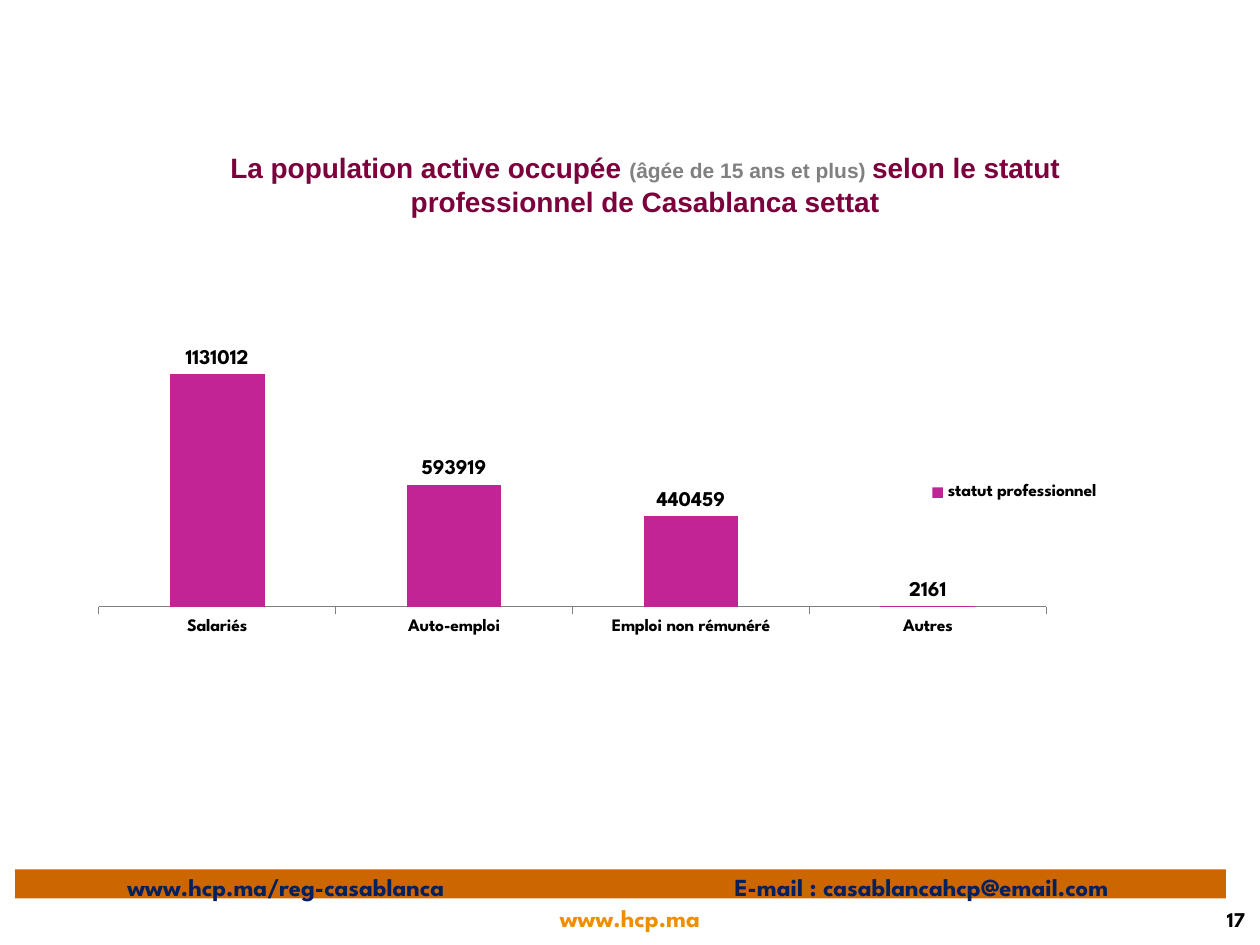
from lxml import etree
from pptx import Presentation
from pptx.chart.data import CategoryChartData
from pptx.dml.color import RGBColor
from pptx.enum.chart import XL_CHART_TYPE, XL_LABEL_POSITION, XL_LEGEND_POSITION, XL_TICK_MARK
from pptx.enum.shapes import MSO_SHAPE
from pptx.enum.text import MSO_ANCHOR, PP_ALIGN
from pptx.oxml import parse_xml
from pptx.oxml.ns import nsdecls, qn
from pptx.util import Inches, Pt

COLORS = {
    "title": "7B003B", "note": "808080", "bar": "C22495", "axis": "808080",
    "band": "CC6600", "contact": "002060", "site": "F18E00", "text": "000000",
}
BODY_FONT = "League Spartan"


def style(font, color, size, name=BODY_FONT, bold=True):
    for attr, value in {"name": name, "size": Pt(size), "bold": bold}.items():
        setattr(font, attr, value)
    font.color.rgb = RGBColor.from_string(COLORS[color])


prs = Presentation()
prs.slide_width, prs.slide_height = Inches(10), Inches(7.5)
s = prs.slides.add_slide(prs.slide_layouts[5])

# Title
title = s.shapes.title
title.left, title.top = Inches(1.3), Inches(0.84)
title.width, title.height = Inches(7.64), Inches(1.25)
tf = title.text_frame
tf.vertical_anchor = MSO_ANCHOR.MIDDLE
p = tf.paragraphs[0]
p.alignment = PP_ALIGN.CENTER
for text, color, size in [
    ("La population active occupée ", "title", 16),
    ("(âgée de 15 ans et plus) ", "note", 12),
    ("selon le statut professionnel de Casablanca settat", "title", 16),
]:
    r = p.add_run()
    r.text = text
    style(r.font, color, size, "Arial")

# Column chart
data = CategoryChartData()
data.categories = ["Salariés", "Auto-emploi", "Emploi non rémunéré", "Autres"]
data.add_series("statut professionnel", [1131012, 593919, 440459, 2161])
chart = s.shapes.add_chart(
    XL_CHART_TYPE.COLUMN_CLUSTERED,
    Inches(0.5), Inches(1.8), Inches(8.33), Inches(4.22), data,
).chart
style(chart.font, "text", 10, bold=False)
chart.has_title = False
chart.has_legend = True
chart.legend.position = XL_LEGEND_POSITION.RIGHT
chart.legend.include_in_layout = False
style(chart.legend.font, "text", 10)

value_axis = chart.value_axis
value_axis.visible = False
value_axis.has_major_gridlines = False
value_axis.minimum_scale, value_axis.maximum_scale = 0, 1200000
category_axis = chart.category_axis
category_axis.major_tick_mark = XL_TICK_MARK.OUTSIDE
category_axis.format.line.color.rgb = RGBColor.from_string(COLORS["axis"])
style(category_axis.tick_labels.font, "text", 10)

plot = chart.plots[0]
plot.gap_width = 150
plot.vary_by_categories = False
fill = plot.series[0].format.fill
fill.solid()
fill.fore_color.rgb = RGBColor.from_string(COLORS["bar"])
plot.has_data_labels = True
labels = plot.data_labels
labels.show_value = True
labels.position = XL_LABEL_POSITION.OUTSIDE_END
style(labels.font, "text", 12)

# Fixed inner plot area, as fractions of the chart
plot_area = chart.element.find(".//" + qn("c:plotArea"))
for old in plot_area.findall(qn("c:layout")):
    plot_area.remove(old)
layout = parse_xml(f'<c:layout {nsdecls("c")}><c:manualLayout/></c:layout>')
for tag, value in [
    ("layoutTarget", "inner"), ("xMode", "edge"), ("yMode", "edge"),
    ("x", 0.034), ("y", 0.251), ("w", 0.903), ("h", 0.464),
]:
    etree.SubElement(layout[0], qn(f"c:{tag}")).set("val", str(value))
plot_area.insert(0, layout)

# Contact band
band = s.shapes.add_shape(
    MSO_SHAPE.RECTANGLE, Inches(0.12), Inches(6.9), Inches(9.61), Inches(0.23))
band.shadow.inherit = False
band.fill.solid()
band.fill.fore_color.rgb = RGBColor.from_string(COLORS["band"])
band.line.fill.background()
tf = band.text_frame
tf.vertical_anchor = MSO_ANCHOR.MIDDLE
tf.margin_left, tf.margin_top = Inches(0.89), Inches(0.04)
tf.margin_right = tf.margin_bottom = 0
p = tf.paragraphs[0]
p.alignment = PP_ALIGN.LEFT
tabs = etree.SubElement(p._p.get_or_add_pPr(), qn("a:tabLst"))
etree.SubElement(tabs, qn("a:tab"), pos=str(Inches(4.82)), algn="l")
r = p.add_run()
r.text = "www.hcp.ma/reg-casablanca\tE-mail : casablancahcp@email.com"
style(r.font, "contact", 14)

# Site address and page number
for text, left, width, height, align, color, size in [
    ("www.hcp.ma", 3.82, 2.36, 0.33, PP_ALIGN.CENTER, "site", 14),
    ("17", 8.46, 1.52, 0.35, PP_ALIGN.RIGHT, "text", 12),
]:
    box = s.shapes.add_textbox(Inches(left), Inches(7.12), Inches(width), Inches(height))
    tf = box.text_frame
    tf.word_wrap = True
    tf.vertical_anchor = MSO_ANCHOR.MIDDLE
    p = tf.paragraphs[0]
    p.alignment = align
    r = p.add_run()
    r.text = text
    style(r.font, color, size)

prs.save("out.pptx")
